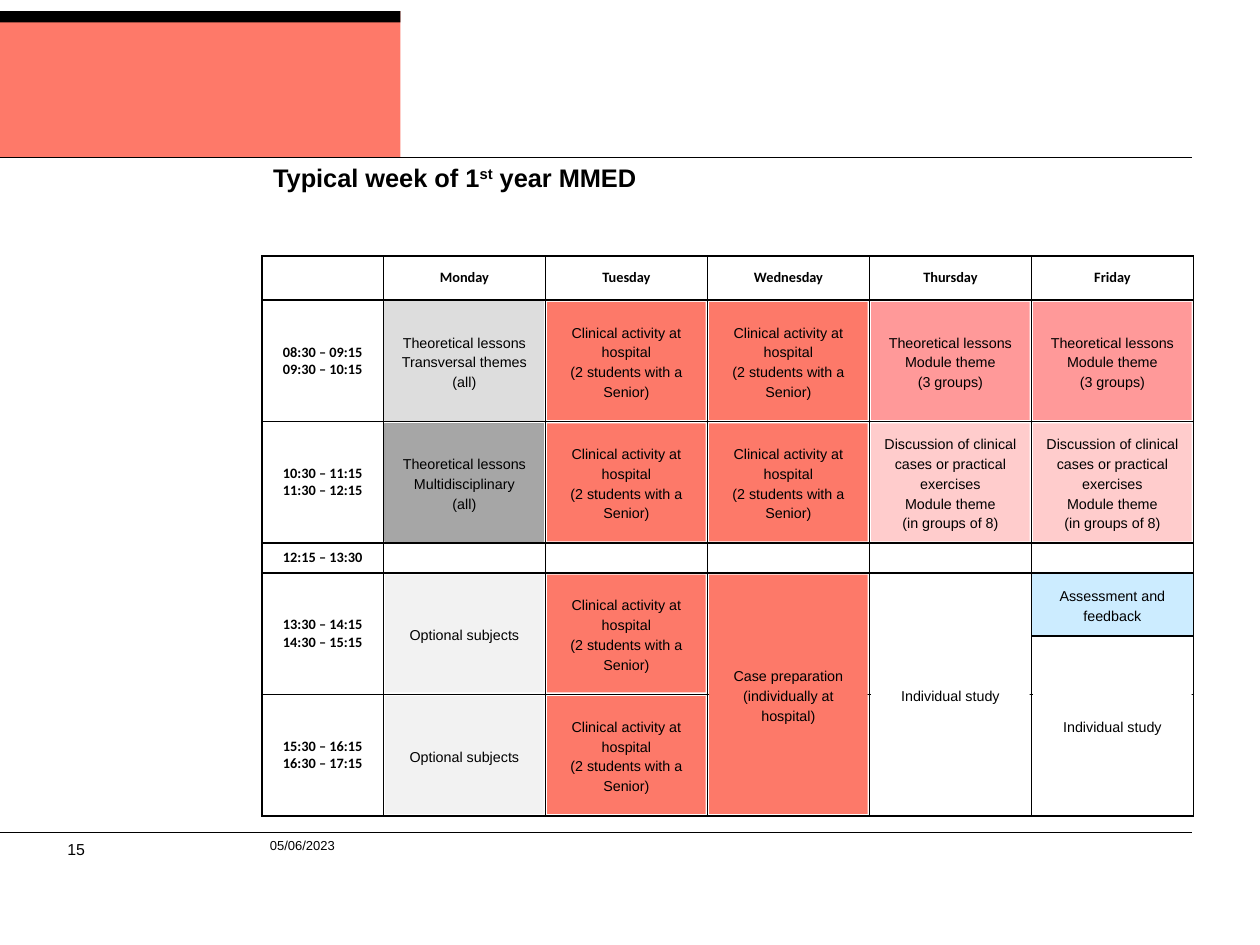
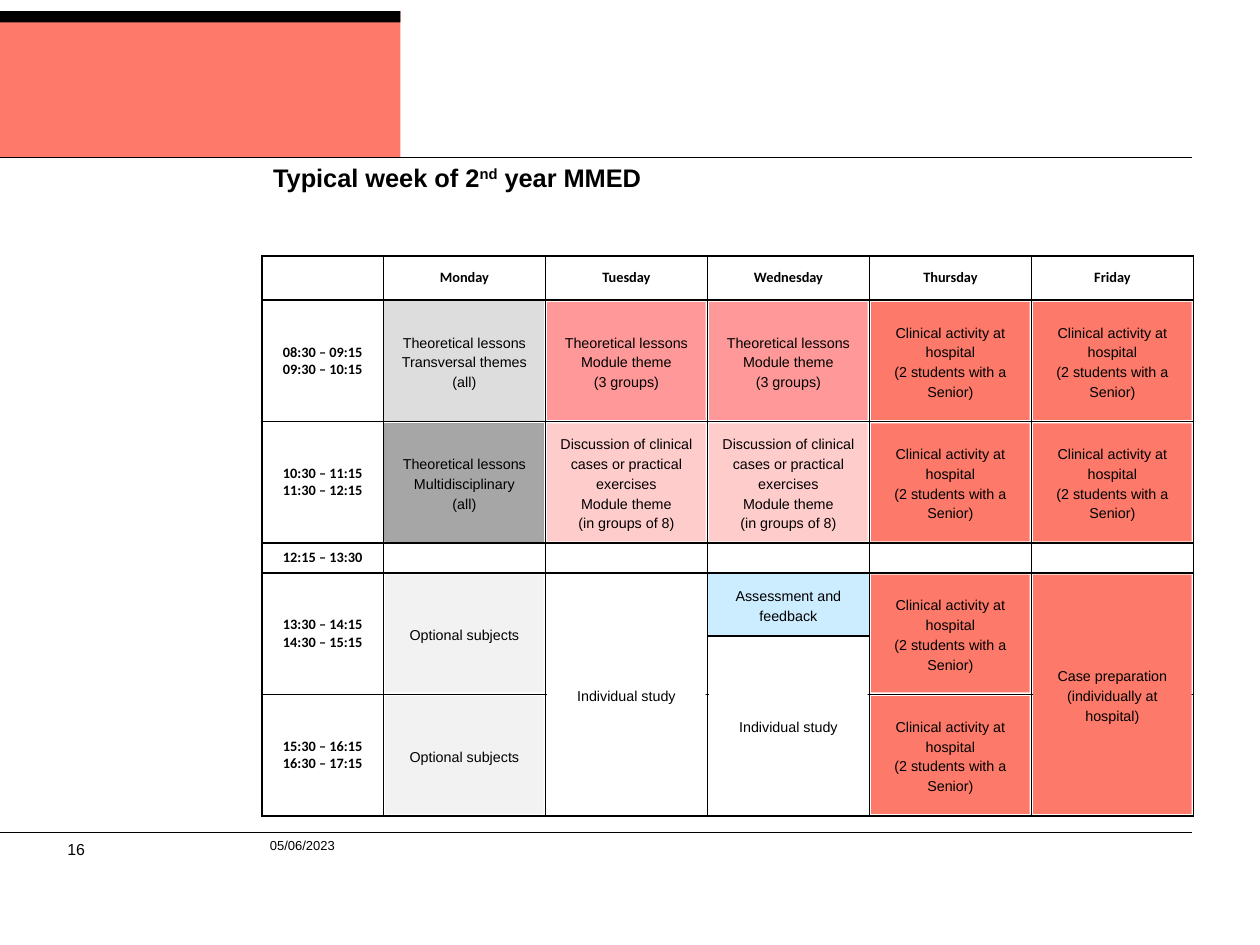
from dataclasses import dataclass
from itertools import accumulate

from lxml import etree
from pptx import Presentation
from pptx.dml.color import RGBColor
from pptx.enum.shapes import MSO_CONNECTOR as Connector, MSO_SHAPE as Shape
from pptx.enum.text import MSO_ANCHOR as Anchor, PP_ALIGN as Align
from pptx.oxml.ns import qn
from pptx.util import Cm, Pt


@dataclass(frozen=True)
class Theme:
    black: str = "000000"
    white: str = "FFFFFF"
    band: str = "FE7969"
    coral: str = "FD7969"
    salmon: str = "FF9999"
    blush: str = "FFCCCC"
    sky: str = "CCECFF"
    pale_grey: str = "F2F2F2"
    light_grey: str = "DDDDDD"
    mid_grey: str = "A6A6A6"
    grey_edge: str = "A3A3A3"
    font: str = "Arial"
    table_font: str = "Calibri"
    title_size: float = 16
    number_size: float = 10
    body_size: float = 9
    date_size: float = 8.2
    hairline: float = 0.3
    border: float = 1


THEME = Theme()


@dataclass(frozen=True)
class Activity:
    lines: tuple
    fill: str
    outline: str = None


TRANSVERSAL = Activity(("Theoretical lessons", "Transversal themes", "(all)"),
                       THEME.light_grey, THEME.light_grey)
MULTIDISCIPLINARY = Activity(("Theoretical lessons", "Multidisciplinary", "(all)"),
                             THEME.mid_grey, THEME.grey_edge)
OPTIONAL = Activity(("Optional subjects",), THEME.pale_grey)
CLINICAL = Activity(("Clinical activity at hospital", "(2 students with a Senior)"), THEME.coral)
CASE = Activity(("Case preparation", "(individually at hospital)"), THEME.coral)
LESSONS = Activity(("Theoretical lessons", "Module theme", "(3 groups)"), THEME.salmon)
DISCUSSION = Activity(("Discussion of clinical cases or practical exercises",
                       "Module theme", "(in groups of 8)"), THEME.blush)
STUDY = Activity(("Individual study",), THEME.white)
FEEDBACK = Activity(("Assessment and feedback",), THEME.sky, THEME.black)

# Activities of a day: two morning rows, then one or two in the afternoon
COMMON_DAY = (TRANSVERSAL, MULTIDISCIPLINARY, OPTIONAL, OPTIONAL)
CLINICAL_DAY = (CLINICAL, CLINICAL, CLINICAL, CLINICAL)
CASE_DAY = (CLINICAL, CLINICAL, CASE)
MODULE_DAY = (LESSONS, DISCUSSION, STUDY)
FEEDBACK_DAY = (LESSONS, DISCUSSION, FEEDBACK, STUDY)

DAYS = ("Monday", "Tuesday", "Wednesday", "Thursday", "Friday")
TIMES = (("08:30 – 09:15", "09:30 – 10:15"), ("10:30 – 11:15", "11:30 – 12:15"),
         ("12:15 – 13:30",),
         ("13:30 – 14:15", "14:30 – 15:15"), ("15:30 – 16:15", "16:30 – 17:15"))
WEEKS = (
    (15, ("Typical week of 1", "st", " year MMED"),
     (COMMON_DAY, CLINICAL_DAY, CASE_DAY, MODULE_DAY, FEEDBACK_DAY)),
    (16, ("Typical week of 2", "nd", " year MMED"),
     (COMMON_DAY, MODULE_DAY, FEEDBACK_DAY, CLINICAL_DAY, CASE_DAY)),
)

# The slide is a grid of 28 columns by 21 rows, one centimetre each
GRID_COLUMNS, GRID_ROWS = 28, 21
RIGHT_EDGE = 26.5
TABLE_LEFT, TABLE_TOP = 5.82, 5.69
COLUMN_WIDTHS = [2.7] + [3.6] * len(DAYS)
ROW_HEIGHTS = [0.98, 2.7, 2.7, 0.66, 2.7, 2.7]
COLUMN_EDGES = list(accumulate(COLUMN_WIDTHS, initial=TABLE_LEFT))
ROW_EDGES = list(accumulate(ROW_HEIGHTS, initial=TABLE_TOP))
CELL_GAP = 0.04
FEEDBACK_HEIGHT = 1.4


def box(*lengths):
    return [Cm(length) for length in lengths]


def color(value):
    return RGBColor.from_string(value)


class Deck:
    def __init__(self, theme):
        self.theme = theme
        self.presentation = Presentation()
        self.presentation.slide_width = Cm(GRID_COLUMNS)
        self.presentation.slide_height = Cm(GRID_ROWS)
        self.slide = None

    def add_slide(self, number):
        """Start a slide with the shared bands, rules and footer."""
        self.slide = self.presentation.slides.add_slide(self.presentation.slide_layouts[6])
        self.rule(18.5)
        self.text(1.5, 18.65, 0.43, 0.43, [str(number)], self.theme.number_size, wrap=False)
        self.rectangle(0, 0.25, 8.9, 3.25, self.theme.band)
        self.rectangle(0, 0.25, 8.9, 0.25, self.theme.black)
        self.rule(3.5)
        self.text(6, 18.62, 18.24, 0.66, ["05/06/2023"], self.theme.date_size)

    def style(self, paragraph, size, font=None, bold=False):
        paragraph.font.size = Pt(size)
        paragraph.font.name = font or self.theme.font
        paragraph.font.bold = bold
        paragraph.font.color.rgb = color(self.theme.black)

    def rule(self, top):
        line = self.slide.shapes.add_connector(
            Connector.STRAIGHT, *box(0, top, RIGHT_EDGE, top))
        line.line.color.rgb = color(self.theme.black)
        line.line.width = Pt(self.theme.hairline)
        etree.SubElement(line._element.spPr, qn("a:effectLst"))

    def rectangle(self, left, top, width, height, fill, outline=None):
        shape = self.slide.shapes.add_shape(Shape.RECTANGLE, *box(left, top, width, height))
        shape.shadow.inherit = False
        shape.fill.solid()
        shape.fill.fore_color.rgb = color(fill)
        if outline:
            shape.line.color.rgb = color(outline)
            shape.line.width = Pt(self.theme.border)
        else:
            shape.line.fill.background()
        return shape

    def text(self, left, top, width, height, runs, size, bold=False, wrap=True):
        """Add a one-paragraph text box; every second run is superscript."""
        frame = self.slide.shapes.add_textbox(*box(left, top, width, height)).text_frame
        frame.word_wrap = wrap
        frame.margin_left = frame.margin_right = frame.margin_top = frame.margin_bottom = 0
        paragraph = frame.paragraphs[0]
        self.style(paragraph, size, bold=bold)
        for index, words in enumerate(runs):
            run = paragraph.add_run()
            run.text = words
            if index % 2:
                run._r.get_or_add_rPr().set("baseline", "30000")

    def title(self, runs):
        self.text(6.07, 3.6, 20.1, 1.35, runs, self.theme.title_size, bold=True)

    def activity(self, activity, left, top, width, height):
        shape = self.rectangle(left, top, width, height, activity.fill, activity.outline)
        frame = shape.text_frame
        frame.word_wrap = True
        frame.vertical_anchor = Anchor.MIDDLE
        frame.text = "\n".join(activity.lines)
        for paragraph in frame.paragraphs:
            paragraph.alignment = Align.CENTER
            paragraph.line_spacing = 1.15
            self.style(paragraph, self.theme.body_size)

    def cell(self, cell, lines):
        properties = cell._tc.get_or_add_tcPr()
        for side in ("lnL", "lnR", "lnT", "lnB"):
            border = etree.SubElement(properties, qn(f"a:{side}"), w=str(Pt(self.theme.border)))
            fill = etree.SubElement(border, qn("a:solidFill"))
            etree.SubElement(fill, qn("a:srgbClr"), val=self.theme.black)
        cell.fill.solid()
        cell.fill.fore_color.rgb = color(self.theme.white)
        cell.vertical_anchor = Anchor.MIDDLE
        cell.text = "\n".join(lines)
        for paragraph in cell.text_frame.paragraphs:
            paragraph.alignment = Align.CENTER
            self.style(paragraph, self.theme.body_size, self.theme.table_font, bold=True)
            if not lines:
                etree.SubElement(paragraph._p, qn("a:endParaRPr"),
                                 sz=str(int(self.theme.body_size * 100)))

    def timetable(self):
        table = self.slide.shapes.add_table(
            len(ROW_HEIGHTS), len(COLUMN_WIDTHS),
            *box(TABLE_LEFT, TABLE_TOP, sum(COLUMN_WIDTHS), sum(ROW_HEIGHTS))).table
        table.first_row = table.horz_banding = False
        for column, width in zip(table.columns, COLUMN_WIDTHS):
            column.width = Cm(width)
        for row, height in zip(table.rows, ROW_HEIGHTS):
            row.height = Cm(height)
        headings = {(0, column): (day,) for column, day in enumerate(DAYS, 1)}
        headings.update({(row, 0): times for row, times in enumerate(TIMES, 1)})
        for row in range(len(ROW_HEIGHTS)):
            for column in range(len(COLUMN_WIDTHS)):
                self.cell(table.cell(row, column), headings.get((row, column), ()))

    def day(self, column, activities):
        """Lay a day's activities over its column of the timetable."""
        left, width = COLUMN_EDGES[column], COLUMN_WIDTHS[column]
        noon, middle, evening = ROW_EDGES[4:]
        afternoon = activities[2:]
        if FEEDBACK in afternoon:
            middle = noon + FEEDBACK_HEIGHT
        spans = [(ROW_EDGES[1], ROW_EDGES[2]), (ROW_EDGES[2], ROW_EDGES[3])]
        spans += [(noon, middle), (middle, evening)] if len(afternoon) == 2 else [(noon, evening)]
        for activity, (top, bottom) in zip(activities, spans):
            gap = 0 if activity is FEEDBACK else CELL_GAP
            self.activity(activity, left + gap, top + gap,
                          width - 2 * gap, bottom - top - 2 * gap)


def main():
    deck = Deck(THEME)
    for number, title, days in WEEKS:
        deck.add_slide(number)
        deck.timetable()
        for column, activities in enumerate(days, 1):
            deck.day(column, activities)
        deck.title(title)
    deck.presentation.save("out.pptx")


if __name__ == "__main__":
    main()
